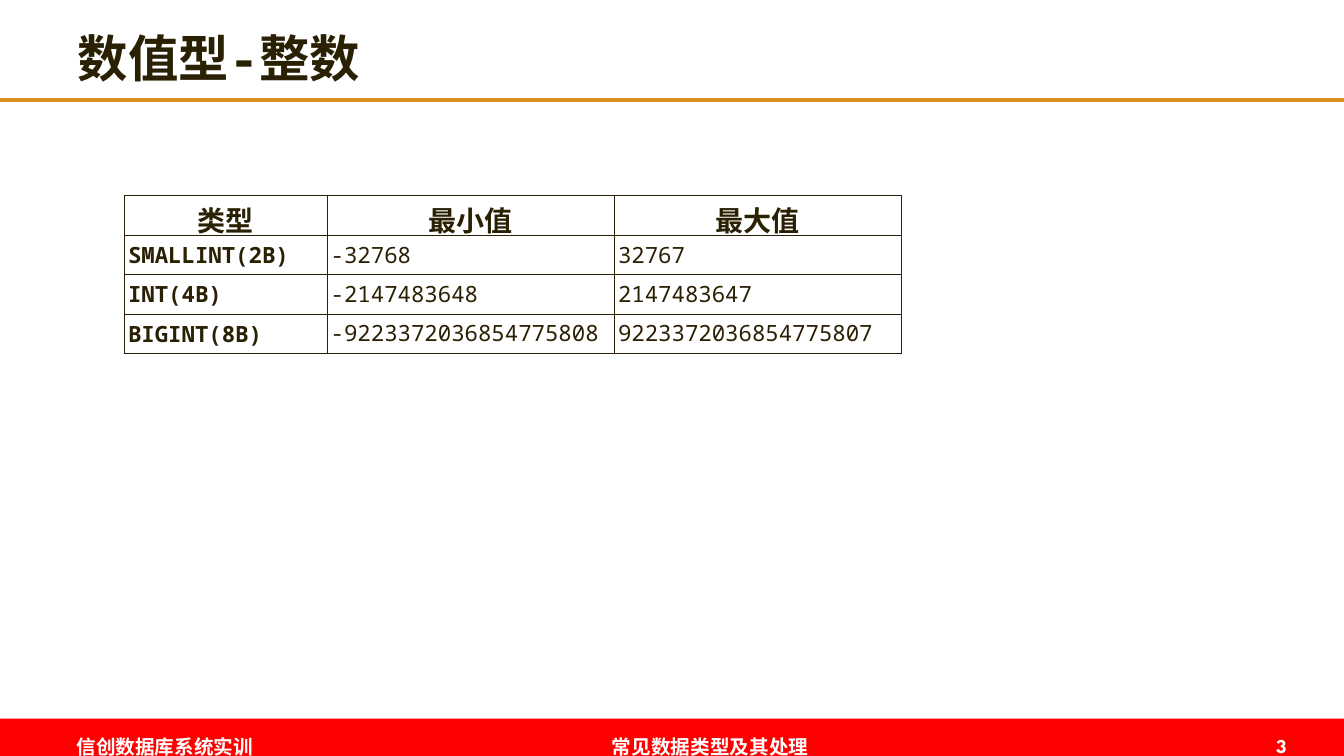
"""Build a slide with a table of the integer types and their value ranges."""
from lxml.etree import SubElement
from pptx import Presentation
from pptx.dml.color import RGBColor
from pptx.enum.shapes import MSO_CONNECTOR, MSO_SHAPE
from pptx.enum.text import MSO_ANCHOR, MSO_AUTO_SIZE, PP_ALIGN
from pptx.oxml import parse_xml
from pptx.oxml.ns import nsdecls, qn
from pptx.util import Inches, Pt

INK = RGBColor(0x2A, 0x20, 0x03)
RED = RGBColor(0xFF, 0x00, 0x00)
GOLD = RGBColor(0xDB, 0x8E, 0x1B)
WHITE = RGBColor(0xFF, 0xFF, 0xFF)
MONO = "Noto Sans Mono"


def add_text(text_frame, text, font_name, size, color, alignment, bold=True):
    paragraph = text_frame.paragraphs[0]
    paragraph.alignment = alignment
    run = paragraph.add_run()
    run.text = text
    run.font.name = font_name
    run.font.size = Pt(size)
    run.font.bold = bold
    run.font.color.rgb = color


def add_borders(cell):
    properties = cell._tc.get_or_add_tcPr()
    for index, side in enumerate(("lnL", "lnR", "lnT", "lnB")):
        border = parse_xml(
            f'<a:{side} {nsdecls("a")} w="{Pt(0.25)}"><a:solidFill>'
            f'<a:srgbClr val="{INK}"/></a:solidFill></a:{side}>'
        )
        properties.insert(index, border)


presentation = Presentation()
presentation.slide_width = Inches(13.33)
presentation.slide_height = Inches(7.5)
slide = presentation.slides.add_slide(presentation.slide_layouts[5])
slide_width = presentation.slide_width

footer_bar = slide.shapes.add_shape(
    MSO_SHAPE.RECTANGLE, 0, Inches(7.13), slide_width, Inches(0.5)
)
footer_bar.shadow.inherit = False
footer_bar.fill.solid()
footer_bar.fill.fore_color.rgb = RED
footer_bar.line.fill.background()

title_rule = slide.shapes.add_connector(
    MSO_CONNECTOR.STRAIGHT, 0, Inches(0.99), slide_width, Inches(0.99)
)
title_rule.line.color.rgb = GOLD
title_rule.line.width = Pt(3)
SubElement(title_rule._element.spPr, qn("a:effectLst"))

footers = [
    ("信创数据库系统实训", 0.66, 7.24, 3.27, PP_ALIGN.LEFT),
    ("常见数据类型及其处理", 5.18, 7.24, 3.73, PP_ALIGN.CENTER),
    ("3", 11.29, 7.23, 1.57, PP_ALIGN.RIGHT),
]
for text, left, top, width, alignment in footers:
    footer = slide.shapes.add_textbox(
        Inches(left), Inches(top), Inches(width), Inches(0.34)
    )
    footer.text_frame.word_wrap = True
    footer.text_frame.auto_size = MSO_AUTO_SIZE.SHAPE_TO_FIT_TEXT
    add_text(footer.text_frame, text, "League Spartan", 14, WHITE, alignment)

title = slide.shapes.title
title.left, title.top = Inches(0.67), Inches(0.14)
title.width, title.height = Inches(12), Inches(0.85)
title.text_frame.vertical_anchor = MSO_ANCHOR.MIDDLE
title.text_frame.auto_size = MSO_AUTO_SIZE.NONE
add_text(title.text_frame, "数值型-整数", MONO, 36, INK, PP_ALIGN.LEFT)

rows = [
    ("类型", "最小值", "最大值"),
    ("SMALLINT(2B)", "-32768", "32767"),
    ("INT(4B)", "-2147483648", "2147483647"),
    ("BIGINT(8B)", "-9223372036854775808", "9223372036854775807"),
]
column_widths = (2.01, 2.85, 2.85)
row_height = Inches(0.39)
table = slide.shapes.add_table(
    len(rows), len(column_widths), Inches(1.23), Inches(1.94),
    Inches(sum(column_widths)), row_height * len(rows),
).table
table.first_row = False
table.horz_banding = False
for column, width in zip(table.columns, column_widths):
    column.width = Inches(width)

for row_index, row in enumerate(rows):
    table.rows[row_index].height = row_height
    is_header = row_index == 0
    margin = Inches(0.03 if is_header else 0.04)
    for column_index, text in enumerate(row):
        cell = table.cell(row_index, column_index)
        cell.margin_left = cell.margin_right = margin
        cell.margin_top = cell.margin_bottom = margin
        cell.fill.background()
        add_borders(cell)
        if is_header:
            add_text(cell.text_frame, text, "Times New Roman", 20, INK, PP_ALIGN.CENTER)
        else:
            is_type = column_index == 0
            cell.vertical_anchor = MSO_ANCHOR.MIDDLE if is_type else MSO_ANCHOR.TOP
            add_text(cell.text_frame, text, MONO, 16, INK, PP_ALIGN.JUSTIFY, is_type)

presentation.save("out.pptx")
